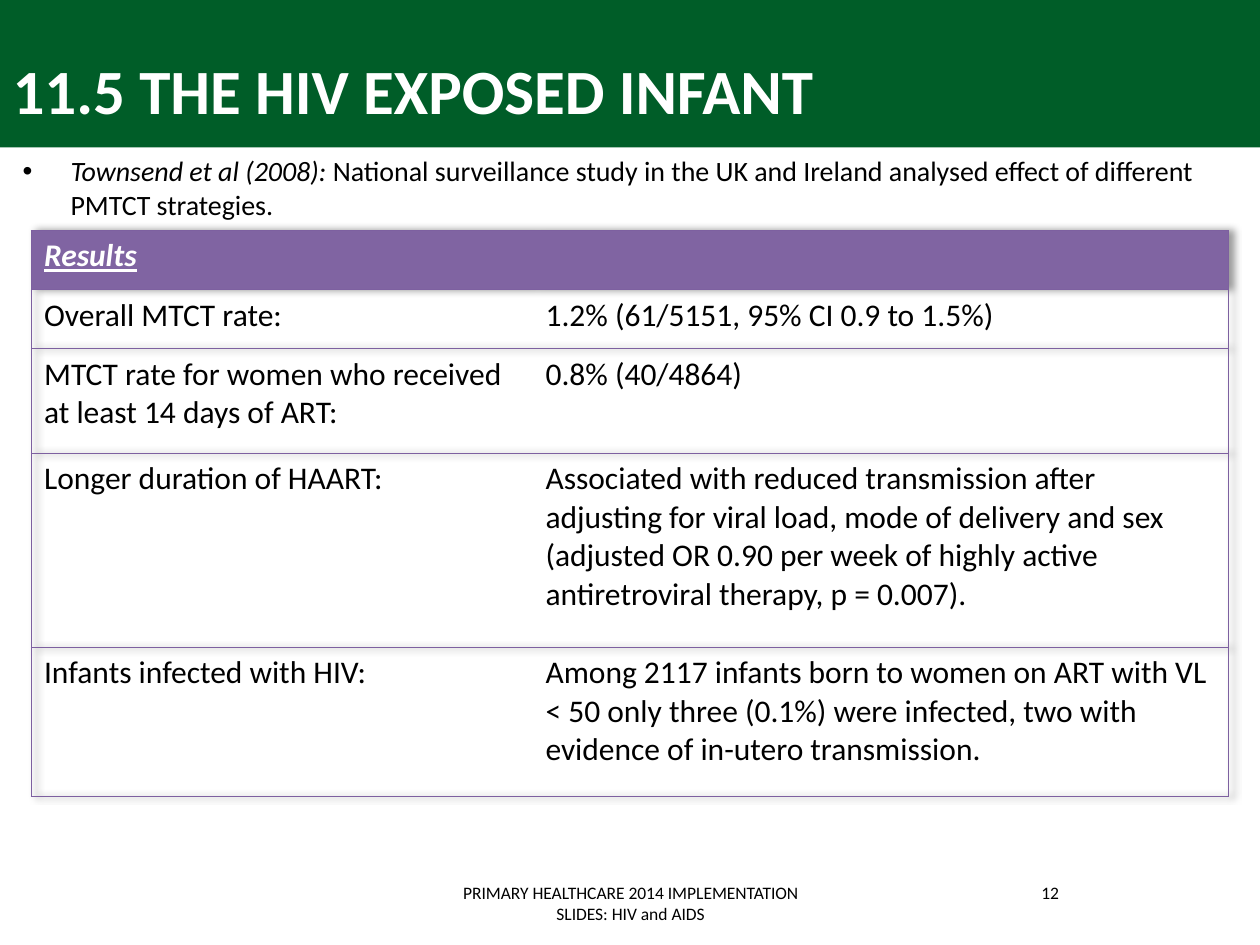
from lxml.etree import SubElement
from pptx import Presentation
from pptx.dml.color import RGBColor
from pptx.enum.shapes import MSO_SHAPE
from pptx.enum.text import MSO_ANCHOR, PP_ALIGN
from pptx.oxml import parse_xml
from pptx.oxml.ns import nsdecls, qn
from pptx.util import Inches, Pt

GREEN = RGBColor(0x00, 0x5D, 0x28)
PURPLE = RGBColor(0x80, 0x64, 0xA2)
RULE = RGBColor(0x7D, 0x60, 0xA0)
BLACK = RGBColor(0, 0, 0)
WHITE = RGBColor(255, 255, 255)
FONT = "Calibri"

COLS = (3.98, 5.52)
ROWS = (
    (0.47, "Results", ""),
    (0.47, "Overall MTCT rate:", "1.2% (61/5151, 95% CI 0.9 to 1.5%)"),
    (0.83, "MTCT rate for women who received at least 14 days of ART:",
     "0.8% (40/4864)"),
    (1.54, "Longer duration of HAART:",
     "Associated with reduced transmission after adjusting for viral load, "
     "mode of delivery and sex (adjusted OR 0.90 per week of highly active "
     "antiretroviral therapy, p = 0.007)."),
    (1.18, "Infants infected with HIV:",
     "Among 2117 infants born to women on ART with VL < 50 only three (0.1%) "
     "were infected, two with evidence of in-utero transmission."),
)


def write(para, text, size=18, color=BLACK, bold=False, italic=False,
          line=False, align=PP_ALIGN.LEFT):
    """Add one formatted run to a paragraph."""
    para.alignment = align
    run = para.add_run()
    run.text = text
    font = run.font
    font.name, font.size, font.color.rgb = FONT, Pt(size), color
    font.bold, font.italic, font.underline = bold, italic, line


def place(shape, left, top, width, height):
    shape.left, shape.top = Inches(left), Inches(top)
    shape.width, shape.height = Inches(width), Inches(height)


def add_bar(slide):
    bar = slide.shapes.add_shape(MSO_SHAPE.RECTANGLE, 0, 0, Inches(10), Inches(1.17))
    bar.shadow.inherit = False
    bar.fill.solid()
    bar.fill.fore_color.rgb = GREEN
    bar.line.fill.background()
    # Send the bar behind the placeholders
    bar.element.getparent().insert(2, bar.element)


def add_title(slide, text):
    title = slide.shapes.title
    place(title, 0, 0.33, 9, 0.83)
    frame = title.text_frame
    frame.vertical_anchor = MSO_ANCHOR.MIDDLE
    frame.margin_bottom = Inches(0.12)
    write(frame.paragraphs[0], text, size=36, color=WHITE, bold=True)


def add_body(slide, source, text):
    body = slide.placeholders[1]
    place(body, 0.08, 1.17, 9.83, 4.95)
    para = body.text_frame.paragraphs[0]
    props = para._p.get_or_add_pPr()
    props.set("marL", str(Inches(0.38)))
    props.set("indent", str(-Inches(0.38)))
    SubElement(props, qn("a:buFont"), typeface="Arial")
    SubElement(props, qn("a:buChar"), char="•")
    para.space_before = Pt(0)
    write(para, source, size=16, italic=True)
    write(para, text, size=16)


def add_note(slide, text, left, width):
    box = slide.shapes.add_textbox(Inches(left), Inches(6.95), Inches(width), Inches(0.4))
    box.text_frame.word_wrap = True
    write(box.text_frame.paragraphs[0], text, size=10, align=PP_ALIGN.CENTER)


def set_rules(cell, sides):
    """Draw rules on the given sides and clear the others."""
    props = cell._tc.get_or_add_tcPr()
    for spot, side in enumerate("LRTB"):
        fill = (f'<a:solidFill><a:srgbClr val="{RULE}"/></a:solidFill>'
                if side in sides else "<a:noFill/>")
        props.insert(spot, parse_xml(
            f'<a:ln{side} {nsdecls("a")} w="{Pt(0.75)}">{fill}</a:ln{side}>'))


def add_shade(table):
    table._tbl.tblPr.insert(0, parse_xml(
        f'<a:effectLst {nsdecls("a")}><a:outerShdw blurRad="50800" dist="38100" '
        'dir="0" algn="l" rotWithShape="0"><a:srgbClr val="000000">'
        '<a:alpha val="40000"/></a:srgbClr></a:outerShdw></a:effectLst>'))


def add_results(slide):
    frame = slide.shapes.add_table(len(ROWS), len(COLS), Inches(0.25), Inches(1.83),
                                   Inches(sum(COLS)), Inches(4.5))
    table = frame.table
    table.horz_banding = False
    add_shade(table)
    for col, width in zip(table.columns, COLS):
        col.width = Inches(width)
    for r, (height, *texts) in enumerate(ROWS):
        table.rows[r].height = Inches(height)
        head = r == 0
        for c, text in enumerate(texts):
            cell = table.cell(r, c)
            if head:
                cell.fill.solid()
                cell.fill.fore_color.rgb = PURPLE
            else:
                cell.fill.background()
            set_rules(cell, "TB" + "LR"[c])
            if text:
                write(cell.text_frame.paragraphs[0], text, bold=head, italic=head,
                      line=head, color=WHITE if head else BLACK)


def main():
    deck = Presentation()
    deck.slide_width, deck.slide_height = Inches(10), Inches(7.5)
    slide = deck.slides.add_slide(deck.slide_layouts[1])
    # Heading
    add_bar(slide)
    add_title(slide, "11.5 THE HIV EXPOSED INFANT")
    # Study and its results
    add_body(slide, "Townsend et al (2008): ",
             "National surveillance study in the UK and Ireland analysed "
             "effect of different PMTCT strategies.")
    add_results(slide)
    # Footer
    add_note(slide, "PRIMARY HEALTHCARE 2014 IMPLEMENTATION SLIDES: HIV and AIDS", 3.42, 3.17)
    add_note(slide, "12", 7.17, 2.33)
    deck.save("out.pptx")


if __name__ == "__main__":
    main()
